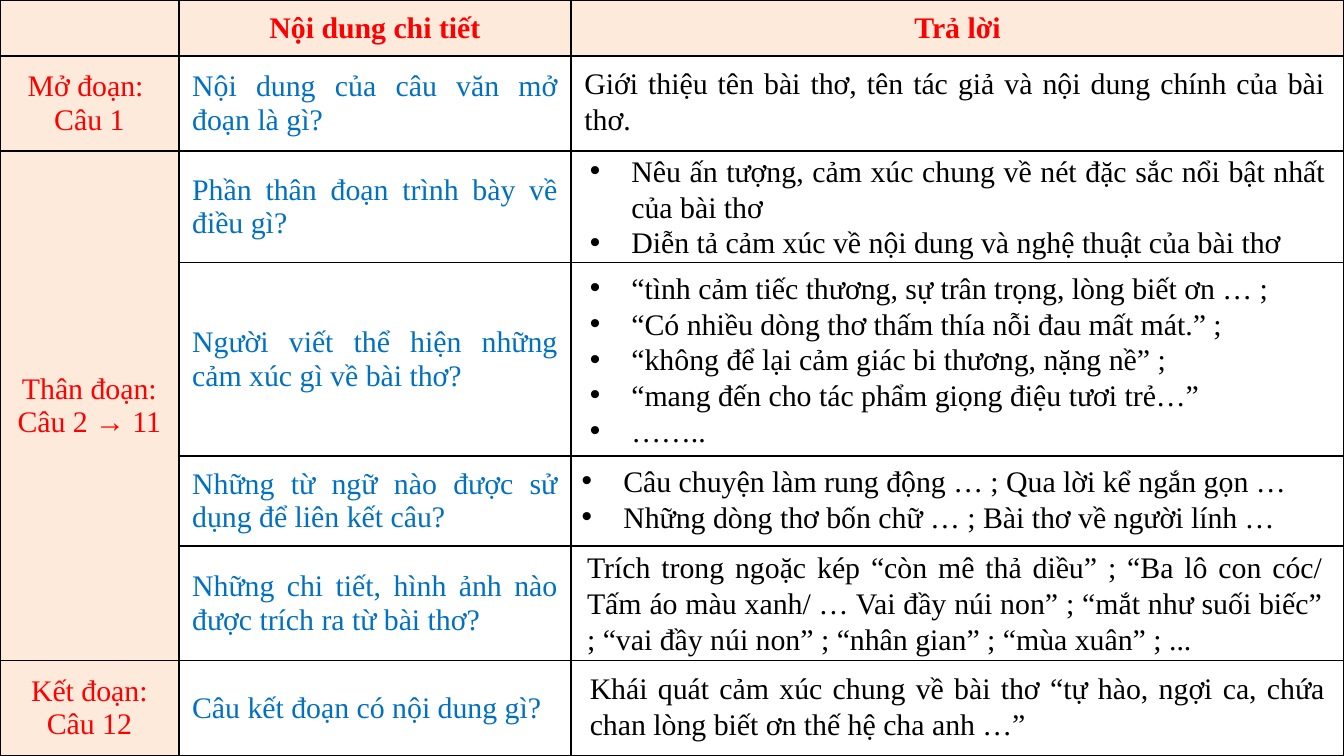
"""Build a slide with a table that analyses a paragraph about a poem."""
from lxml.etree import SubElement
from pptx import Presentation
from pptx.dml.color import RGBColor
from pptx.enum.text import MSO_ANCHOR, MSO_AUTO_SIZE, PP_ALIGN
from pptx.oxml.ns import qn
from pptx.util import Inches, Pt

BLACK = RGBColor(0, 0, 0)
RED = RGBColor(0xFF, 0, 0)
BLUE = RGBColor(0, 0x70, 0xC0)
PEACH = RGBColor(0xFD, 0xEA, 0xDA)
WHITE = RGBColor(0xFF, 0xFF, 0xFF)
FONT = "Times New Roman"
WIDE = 10
HIGH = WIDE * 9 / 16
COLS = [1.33, 2.92, 5.75]
ROWS = [0.41, 0.71, 0.83, 1.44, 0.67, 0.85, 0.71]
TOP = HIGH - sum(ROWS)
LINE, PAD = 0.27, 0.1

HEADS = ["", "Nội dung chi tiết", "Trả lời"]
PARTS = {
    1: "Mở đoạn: \nCâu 1",
    2: "Thân đoạn: Câu 2 → 11",
    6: "Kết đoạn: Câu 12",
}
ASKS = [
    "Nội dung của câu văn mở đoạn là gì?",
    "Phần thân đoạn trình bày về điều gì?",
    "Người viết thể hiện những cảm xúc gì về bài thơ?",
    "Những từ ngữ nào được sử dụng để liên kết câu?",
    "Những chi tiết, hình ảnh nào được trích ra từ bài thơ?",
    "Câu kết đoạn có nội dung gì?",
]
REPLIES = [
    ("Giới thiệu tên bài thơ, tên tác giả và nội dung chính của bài thơ.",
     2, 0, 0.02, False),
    ("Nêu ấn tượng, cảm xúc chung về nét đặc sắc nổi bật nhất của bài thơ\n"
     "Diễn tả cảm xúc về nội dung và nghệ thuật của bài thơ",
     3, 0.04, -0.04, True),
    ("“tình cảm tiếc thương, sự trân trọng, lòng biết ơn … ; \n"
     "“Có nhiều dòng thơ thấm thía nỗi đau mất mát.” ;\n"
     "“không để lại cảm giác bi thương, nặng nề” ; \n"
     "“mang đến cho tác phẩm giọng điệu tươi trẻ…”\n"
     "……..",
     5, 0.04, 0, True),
    ("Câu chuyện làm rung động … ; Qua lời kể ngắn gọn …\n"
     "Những dòng thơ bốn chữ … ; Bài thơ về người lính …",
     2, -0.02, 0, True),
    ("Trích trong ngoặc kép “còn mê thả diều” ; “Ba lô con cóc/ Tấm áo màu "
     "xanh/ … Vai đầy núi non” ; “mắt như suối biếc” ; “vai đầy núi non” ; "
     "“nhân gian” ; “mùa xuân” ; ...",
     3, 0.02, -0.03, False),
    ("Khái quát cảm xúc chung về bài thơ “tự hào, ngợi ca, chứa chan lòng "
     "biết ơn thế hệ cha anh …”",
     2, 0.04, 0.02, False),
]


def bullet(para):
    """Give a paragraph a round bullet and a hanging indent."""
    props = para._p.get_or_add_pPr()
    props.set("marL", str(Inches(0.31)))
    props.set("indent", str(-Inches(0.31)))
    SubElement(props, qn("a:buFont"), typeface="Arial")
    SubElement(props, qn("a:buChar"), char="•")


def write(frame, text, color=BLACK, bold=False, align=PP_ALIGN.JUSTIFY,
          dots=False):
    """Fill a text frame, one paragraph for each line of text."""
    for num, line in enumerate(text.split("\n")):
        para = frame.add_paragraph() if num else frame.paragraphs[0]
        para.alignment = align
        if dots:
            bullet(para)
        run = para.add_run()
        run.text = line
        font = run.font
        font.name, font.size, font.bold = FONT, Pt(16), bold
        font.color.rgb = color


def style(cell, fill):
    """Set the borders, fill and anchor of a cell."""
    props = cell._tc.get_or_add_tcPr()
    for side in ("lnL", "lnR", "lnT", "lnB"):
        edge = SubElement(props, qn(f"a:{side}"), w=str(Pt(1)))
        paint = SubElement(edge, qn("a:solidFill"))
        SubElement(paint, qn("a:srgbClr"), val=str(BLACK))
    cell.fill.solid()
    cell.fill.fore_color.rgb = fill
    cell.vertical_anchor = MSO_ANCHOR.MIDDLE


def add_grid(slide):
    """Add the table with its headings, parts and questions."""
    frame = slide.shapes.add_table(
        len(ROWS), len(COLS), 0, Inches(TOP), Inches(WIDE), Inches(sum(ROWS)))
    table = frame.table
    table.first_row = table.horz_banding = False
    for col, width in zip(table.columns, COLS):
        col.width = Inches(width)
    for row, height in zip(table.rows, ROWS):
        row.height = Inches(height)
    for y in range(len(ROWS)):
        for x in range(len(COLS)):
            style(table.cell(y, x), WHITE if x and y else PEACH)
    table.cell(2, 0).merge(table.cell(5, 0))
    for x, text in enumerate(HEADS):
        if text:
            write(table.cell(0, x).text_frame, text, color=RED, bold=True,
                  align=PP_ALIGN.CENTER)
    for y, text in PARTS.items():
        write(table.cell(y, 0).text_frame, text, color=RED,
              align=PP_ALIGN.CENTER)
    for y, text in enumerate(ASKS, 1):
        write(table.cell(y, 1).text_frame, text, color=BLUE)


def add_reply(slide, row, text, lines, right, down, dots):
    """Add an answer over the last cell of a row, nudged right and down."""
    left = sum(COLS[:2]) + right
    top = TOP + sum(ROWS[:row]) + down
    width = COLS[2] - (0.08 if right else 0.04)
    box = slide.shapes.add_textbox(
        Inches(left), Inches(top), Inches(width), Inches(lines * LINE + PAD))
    frame = box.text_frame
    frame.word_wrap = True
    frame.auto_size = MSO_AUTO_SIZE.SHAPE_TO_FIT_TEXT
    write(frame, text, dots=dots)


def main():
    """Build and save the slide."""
    deck = Presentation()
    deck.slide_width, deck.slide_height = Inches(WIDE), Inches(HIGH)
    slide = deck.slides.add_slide(deck.slide_layouts[6])
    add_grid(slide)
    for row, reply in enumerate(REPLIES, 1):
        add_reply(slide, row, *reply)
    deck.save("out.pptx")


if __name__ == "__main__":
    main()
